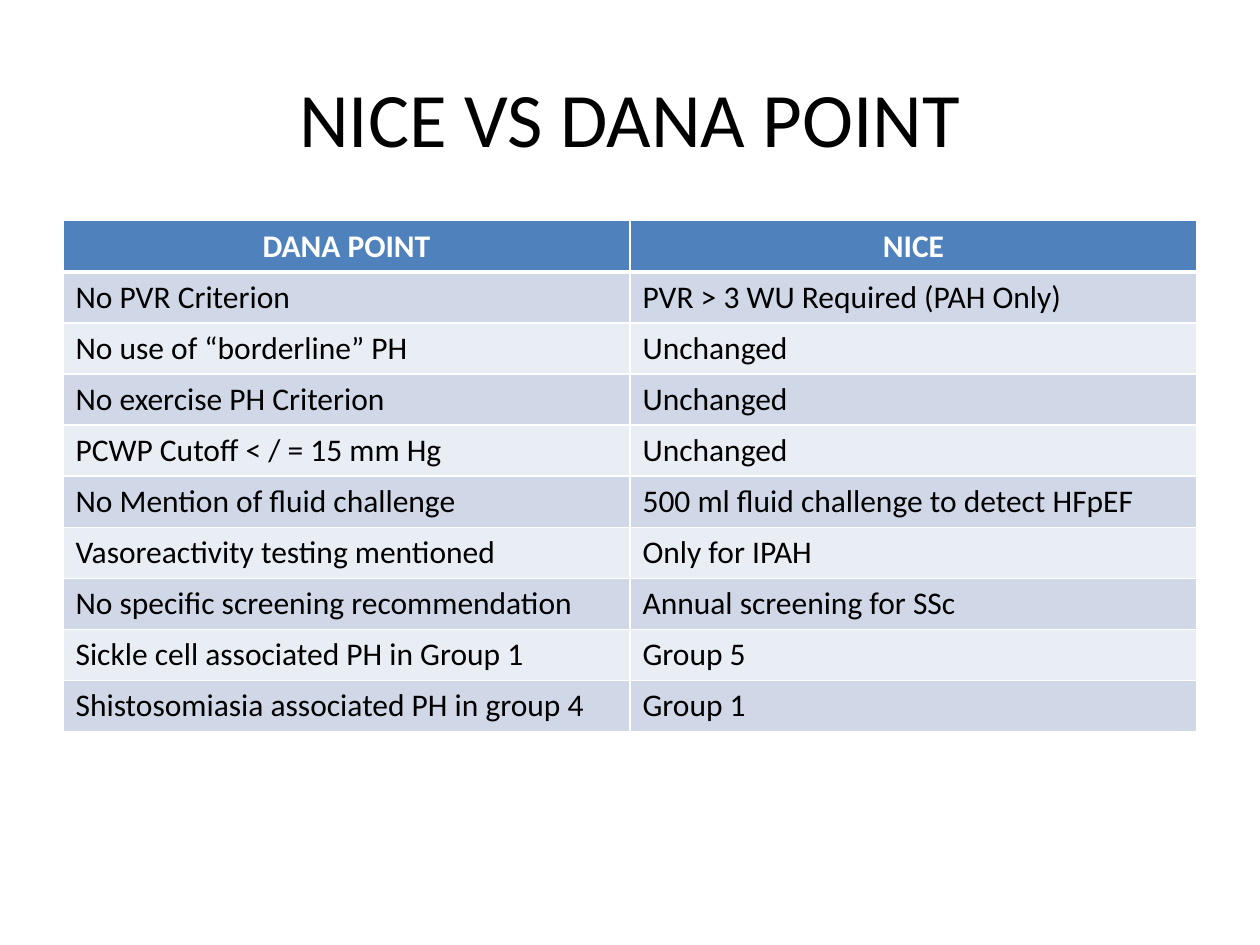
from lxml import etree
from pptx import Presentation
from pptx import util as u
from pptx.dml import color
from pptx.enum import text
from pptx.oxml import ns


def write(frame, words, *, size, hex_color, bold=False, align=text.PP_ALIGN.LEFT):
    para = frame.paragraphs[0]
    para.alignment = align
    span = para.add_run()
    span.text = words
    span.font.name = "Calibri"
    span.font.size = u.Pt(size)
    span.font.bold = bold
    span.font.color.rgb = color.RGBColor.from_string(hex_color)


def add_border(cell, side, points, hex_color="FFFFFF"):
    properties = cell._tc.get_or_add_tcPr()
    line = etree.SubElement(properties, ns.qn(f"a:ln{side}"), w=str(u.Pt(points)))
    fill = etree.SubElement(line, ns.qn("a:solidFill"))
    etree.SubElement(fill, ns.qn("a:srgbClr"), val=hex_color)


deck = Presentation()
deck.slide_width = u.Cm(25.4)
deck.slide_height = u.Cm(19.05)
page = deck.slides.add_slide(deck.slide_layouts[5])

title = page.shapes.title
title.left, title.top = u.Cm(1.27), u.Cm(0.76)
title.width, title.height = u.Cm(22.86), u.Cm(3.18)
title.text_frame.vertical_anchor = text.MSO_ANCHOR.MIDDLE
write(title.text_frame, "NICE VS DANA POINT", size=44, hex_color="000000",
      align=text.PP_ALIGN.CENTER)

rows = [
    ("DANA POINT", "NICE"),
    ("No PVR Criterion", "PVR > 3 WU Required (PAH Only)"),
    ("No use of “borderline” PH", "Unchanged"),
    ("No exercise PH Criterion", "Unchanged"),
    ("PCWP Cutoff < / = 15 mm Hg", "Unchanged"),
    ("No Mention of fluid challenge", "500 ml fluid challenge to detect HFpEF"),
    ("Vasoreactivity testing mentioned", "Only for IPAH"),
    ("No specific screening recommendation", "Annual screening for SSc"),
    ("Sickle cell associated PH in Group 1", "Group 5"),
    ("Shistosomiasia associated PH in group 4", "Group 1"),
]
row_height = u.Cm(1.03)
table = page.shapes.add_table(len(rows), 2, u.Cm(1.27), u.Cm(4.45),
                              u.Cm(22.86), row_height * len(rows)).table

for row, pair in enumerate(rows):
    table.rows[row].height = row_height
    header = row == 0
    band = "4F81BD" if header else ("E9EDF4", "D0D8E8")[row % 2]
    for column, words in enumerate(pair):
        cell = table.cell(row, column)
        add_border(cell, "L", 1)
        add_border(cell, "R", 1)
        add_border(cell, "T", 3 if row == 1 else 1)
        add_border(cell, "B", 3 if header else 1)
        cell.fill.solid()
        cell.fill.fore_color.rgb = color.RGBColor.from_string(band)
        write(cell.text_frame, words, size=18, bold=header,
              hex_color="FFFFFF" if header else "000000",
              align=text.PP_ALIGN.CENTER if header else text.PP_ALIGN.LEFT)

deck.save("out.pptx")
